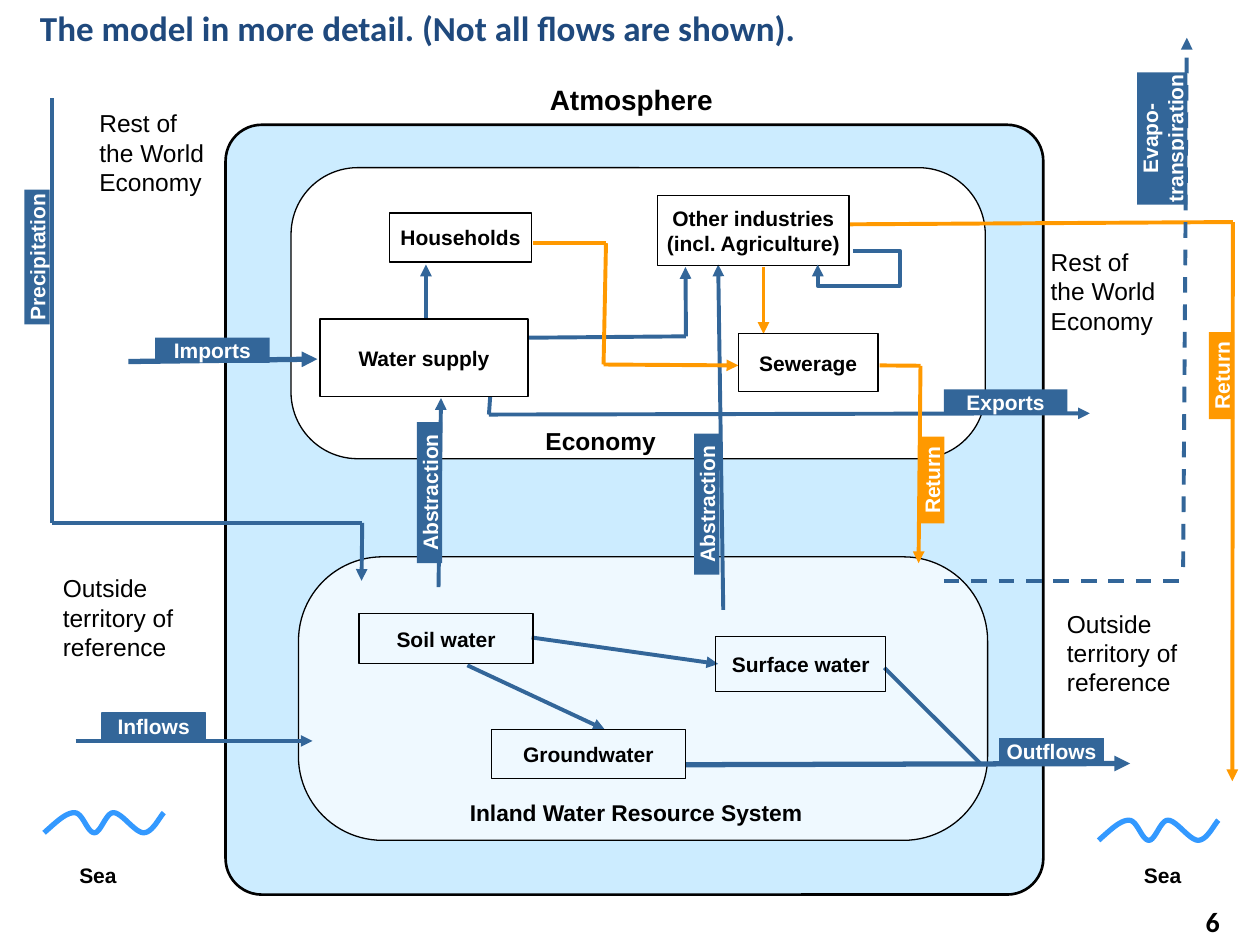
"""Build the slide of water flows between economy, inland water and environment."""
from typing import NamedTuple, Optional

from lxml.etree import SubElement
from pptx import Presentation
from pptx.dml.color import RGBColor
from pptx.enum.dml import MSO_LINE
from pptx.enum.shapes import MSO_CONNECTOR, MSO_SHAPE
from pptx.enum.text import MSO_ANCHOR, PP_ALIGN
from pptx.oxml.ns import qn
from pptx.util import Pt

COLORS = {"sky": "CCECFF", "white": "FFFFFF", "black": "000000", "water": "336699",
          "return": "FF9900", "sea": "3399FF", "title": "1F497D"}


class Zone(NamedTuple):
    at: tuple
    radius: float
    fill: str
    line: float = 0.75
    opacity: Optional[int] = None


class Box(NamedTuple):
    text: str
    at: tuple


class Label(NamedTuple):
    text: str
    at: tuple
    rotation: int = 0
    color: str = "water"
    outlined: bool = False


class Caption(NamedTuple):
    text: str
    at: tuple
    size: float
    bold: bool = True
    wrap: bool = True
    font: str = "Arial"
    color: str = "black"
    align: PP_ALIGN = PP_ALIGN.LEFT
    anchor: MSO_ANCHOR = MSO_ANCHOR.TOP


class Flow(NamedTuple):
    points: tuple
    color: str = "water"
    width: float = 2.25
    arrow: bool = True
    dashed: bool = False


ZONES = [
    Zone((128.9, 71.3, 467.3, 439.9), 0.047, "sky", 1.5),
    Zone((170.6, 318.2, 393.8, 162), 0.296, "white", opacity=70),
    Zone((166.3, 95.8, 396.7, 166.3), 0.229, "white"),
]
BOXES = [
    Box("Water supply", (182.9, 182.2, 118.8, 44.6)),
    Box("Households", (222.5, 121.7, 81.4, 28.1)),
    Box("Other industries (incl. Agriculture)", (375.8, 111.6, 109.4, 40.3)),
    Box("Sewerage", (421.9, 190.8, 79.9, 33.1)),
    Box("Groundwater", (280.8, 416.9, 110.9, 28.1)),
    Box("Soil water", (205.2, 350.6, 99.4, 28.8)),
    Box("Surface water", (409, 363.6, 97.2, 31.7)),
]
LABELS = [
    Label("Abstraction", (205.2, 274.3, 80.6, 14.4), 270),
    Label("Abstraction", (363.6, 280.8, 80.6, 14.4), 270),
    Label("Precipitation", (-17.3, 139.7, 77, 14.4), 270),
    Label("Evapo-transpiration", (626.4, 64.8, 75.6, 28.8), 270),
    Label("Return", (673.2, 207.4, 49.7, 14.4), 270, "return"),
    Label("Return", (507.6, 267.1, 49.7, 14.4), 270, "return"),
    Label("Imports", (88.6, 193, 65.5, 14.4)),
    Label("Exports", (539.3, 222.5, 70.6, 14.4)),
    Label("Outflows", (571, 421.9, 59.8, 15.1), outlined=True),
    Label("Inflows", (58.3, 407.5, 59, 15.1), outlined=True),
]
FLOWS = [
    Flow(((73.4, 206.6), (181.4, 205.2)), width=3),
    Flow(((280.1, 226.8), (279.4, 236.9), (622.8, 236.2))),
    Flow(((29.5, 56.2), (29.5, 298.8), (207, 298.8), (206.6, 331.9))),
    Flow(((43.2, 423.4), (178.6, 423.4))),
    Flow(((391.7, 437), (645.8, 436.3)), width=3),
    Flow(((505.4, 381.6), (560.9, 437)), arrow=False),
    Flow(((250.6, 335.5), (252, 227.5))),
    Flow(((413.3, 348.5), (410.4, 151.2))),
    Flow(((243.4, 182.2), (243.4, 151.2))),
    Flow(((301.7, 193), (392, 192.2), (391.7, 152.6))),
    Flow(((303.8, 364.3), (410.4, 379.4))),
    Flow(((267.1, 380.2), (345.6, 416.9))),
    Flow(((436.3, 152.6), (436.3, 190.8)), "return"),
    Flow(((304.6, 139), (346.3, 139), (344.9, 208.3), (421.9, 208.8)), "return"),
    Flow(((502.6, 208.8), (526, 209), (524.9, 321.8)), "return"),
    Flow(((484.6, 128.2), (704.5, 126.9), (704.2, 446.4)), "return"),
]
EVAPORATION = [
    Flow(((539.3, 331.9), (678.2, 331.9)), arrow=False, dashed=True),
    Flow(((676.1, 324), (678.2, 21.6)), dashed=True),
]
REUSE = Flow(((487.4, 143.3), (514.1, 143.3), (514.1, 163.4), (467.3, 163.4), (467.3, 151.2)))
WORLD, OUTSIDE = "Rest of the World Economy", "Outside territory of reference"
CAPTIONS = [
    Caption("The model in more detail. (Not all flows are shown).", (15.8, 0, 700.6, 31), 20,
            font="Calibri", color="title", align=PP_ALIGN.JUSTIFY),
    Caption("Atmosphere", (304.6, 43.9, 112.3, 26.6), 16, align=PP_ALIGN.CENTER),
    Caption("Economy", (304.6, 239.8, 84, 23.8), 14),
    Caption("Inland Water Resource System", (261.4, 452.9, 210, 23), 13),
    Caption(WORLD, (49.7, 58.3, 78.5, 57.6), 14, False),
    Caption(WORLD, (593.3, 137.5, 78.5, 57.6), 14, False),
    Caption(OUTSIDE, (28.8, 324, 82.1, 57.6), 14, False),
    Caption(OUTSIDE, (602.6, 344.2, 82.1, 57.6), 14, False),
    Caption("Sea", (38.2, 489.6, 38, 21.6), 12),
    Caption("Sea", (646.6, 489.6, 38, 21.6), 12),
    Caption("6", (681.8, 517.7, 35.3, 17.3), 16, font="Calibri", anchor=MSO_ANCHOR.MIDDLE),
]
WAVES = [(25.2, 464.4), (627.8, 468.7)]
WAVE_CURVES = [
    ((0, 11.5), (6.5, 5.8), (12.2, 0), (17.3, 0)),
    ((17.3, 0), (22.3, 0), (24.5, 11.5), (28.8, 11.5)),
    ((28.8, 11.5), (32.4, 11.5), (35.3, 0), (39.6, 0)),
    ((39.6, 0), (44.6, 0), (51.8, 11.5), (56.9, 11.5)),
    ((56.9, 11.5), (61.9, 11.5), (66.2, 2.2), (68.4, 0)),
]


def rgb(name: str) -> RGBColor:
    """Return the named colour."""
    return RGBColor.from_string(COLORS[name])


def add_text(sp, text: str, size: float, color: str, *, bold=True, font="Arial", inset=None,
             align=PP_ALIGN.CENTER, anchor=MSO_ANCHOR.TOP) -> None:
    """Write one run of text into a shape."""
    tf = sp.text_frame
    tf.word_wrap, tf.vertical_anchor = True, anchor
    if inset is not None:
        tf.margin_left = tf.margin_right = tf.margin_top = tf.margin_bottom = Pt(inset)
    p = tf.paragraphs[0]
    p.alignment = align
    r = p.add_run()
    r.text = text
    r.font.size, r.font.bold, r.font.name = Pt(size), bold, font
    r.font.color.rgb = rgb(color)


def add_shape(s, kind, at: tuple, fill: Optional[str], line: Optional[str], width=0.75):
    """Add a flat preset shape."""
    sp = s.shapes.add_shape(kind, *map(Pt, at))
    sp.shadow.inherit = False
    style(sp, fill, line, width)
    return sp


def style(sp, fill: Optional[str], line: Optional[str], width: float) -> None:
    """Set fill and outline, either of which may be absent."""
    for part, color in ((sp.fill, fill), (sp.line.fill, line)):
        if color:
            part.solid()
            part.fore_color.rgb = rgb(color)
        else:
            part.background()
    if line:
        sp.line.width = Pt(width)


def add_arrowhead(sp) -> None:
    """Put a triangle at the end of a line."""
    SubElement(sp.line._get_or_add_ln(), qn("a:tailEnd"), type="triangle")


def draw_zone(s, zone: Zone) -> None:
    """Draw a rounded area."""
    sp = add_shape(s, MSO_SHAPE.ROUNDED_RECTANGLE, zone.at, zone.fill, "black", zone.line)
    sp.adjustments[0] = zone.radius
    if zone.opacity:
        color = sp._element.spPr.find(".//" + qn("a:srgbClr"))
        SubElement(color, qn("a:alpha"), val=str(zone.opacity * 1000))


def draw_box(s, box: Box) -> None:
    """Draw an outlined box with its name."""
    sp = add_shape(s, MSO_SHAPE.RECTANGLE, box.at, None, "black")
    add_text(sp, box.text, 12, "black", inset=0.72, anchor=MSO_ANCHOR.MIDDLE)


def draw_label(s, label: Label) -> None:
    """Draw a filled flow label."""
    line = label.color if label.outlined else None
    sp = add_shape(s, MSO_SHAPE.RECTANGLE, label.at, label.color, line)
    sp.rotation = label.rotation
    add_text(sp, label.text, 12, "white", inset=0)


def draw_caption(s, c: Caption) -> None:
    """Draw free-standing text."""
    sp = s.shapes.add_textbox(*map(Pt, c.at))
    add_text(sp, c.text, c.size, c.color, bold=c.bold, font=c.font, align=c.align,
             anchor=c.anchor)


def draw_flow(s, flow: Flow) -> None:
    """Draw a chain of straight connectors, with the arrowhead on the last."""
    for start, end in zip(flow.points, flow.points[1:]):
        sp = s.shapes.add_connector(MSO_CONNECTOR.STRAIGHT, *map(Pt, start + end))
        sp.line.color.rgb = rgb(flow.color)
        sp.line.width = Pt(flow.width)
        if flow.dashed:
            sp.line.dash_style = MSO_LINE.DASH
        SubElement(sp._element.spPr, qn("a:effectLst"))
    if flow.arrow:
        add_arrowhead(sp)


def draw_path(s, points, color: str, width: float):
    """Draw an open outline through the points."""
    (x, y), *rest = [(Pt(px), Pt(py)) for px, py in points]
    fb = s.shapes.build_freeform(x, y)
    fb.add_line_segments(rest, close=False)
    sp = fb.convert_to_shape()
    sp.shadow.inherit = False
    style(sp, None, color, width)
    return sp


def bezier(curve: tuple, t: float) -> tuple:
    """Return the point of a cubic curve at t."""
    weights = ((1 - t) ** 3, 3 * t * (1 - t) ** 2, 3 * t * t * (1 - t), t ** 3)
    return tuple(sum(w * p[axis] for w, p in zip(weights, curve)) for axis in (0, 1))


def draw_wave(s, left: float, top: float, steps: int = 12) -> None:
    """Draw a sea wave."""
    points = [WAVE_CURVES[0][0]]
    points += [bezier(c, i / steps) for c in WAVE_CURVES for i in range(1, steps + 1)]
    draw_path(s, [(left + x, top + y) for x, y in points], "sea", 3)


def main() -> None:
    """Build and save the slide."""
    prs = Presentation()
    prs.slide_width, prs.slide_height = Pt(720), Pt(540)
    s = prs.slides.add_slide(prs.slide_layouts[6])
    for draw, items in ((draw_zone, ZONES), (draw_flow, FLOWS), (draw_label, LABELS),
                        (draw_flow, EVAPORATION), (draw_box, BOXES), (draw_caption, CAPTIONS)):
        for item in items:
            draw(s, item)
    add_arrowhead(draw_path(s, REUSE.points, REUSE.color, REUSE.width))
    for left, top in WAVES:
        draw_wave(s, left, top)
    prs.save("out.pptx")


if __name__ == "__main__":
    main()
